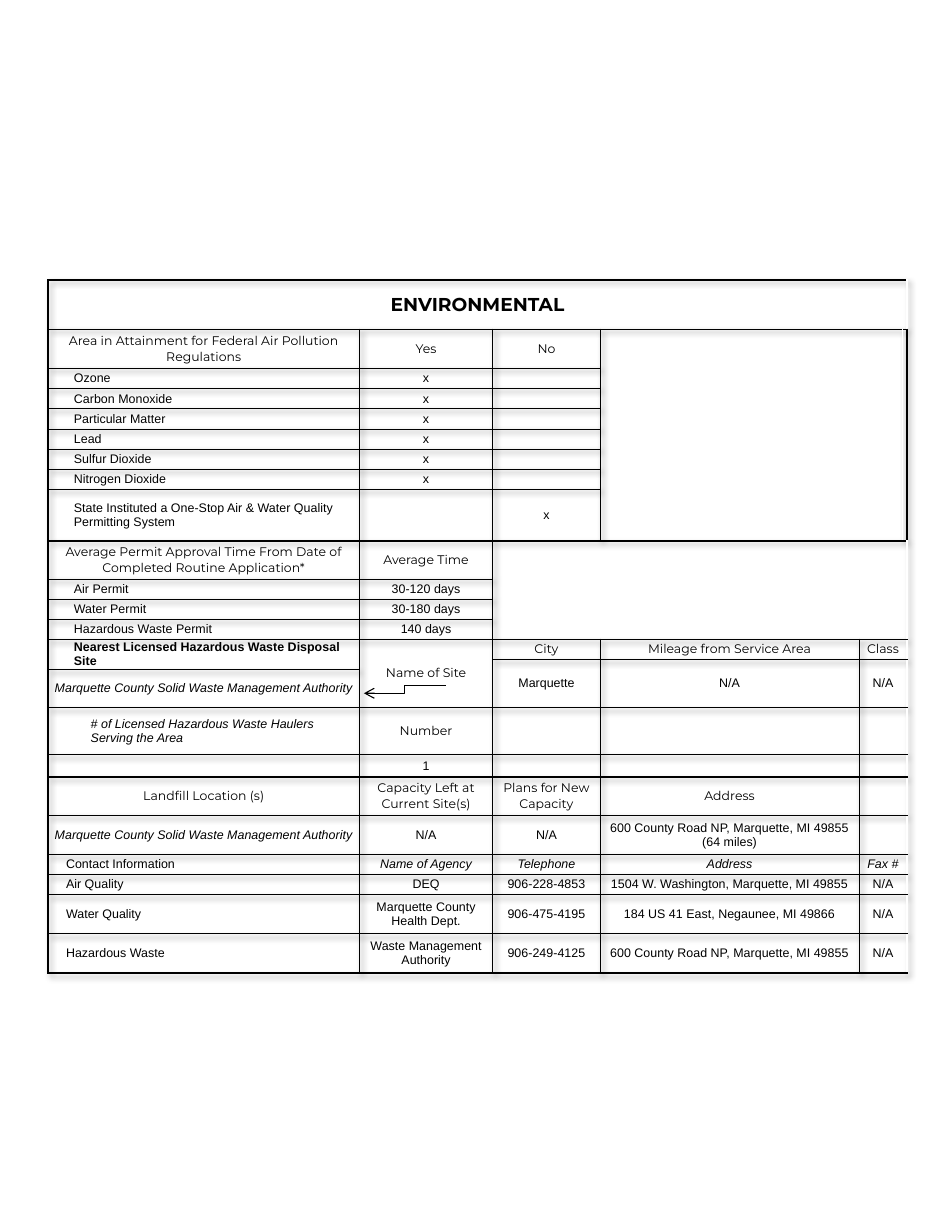
from dataclasses import dataclass

from lxml.etree import SubElement
from pptx import Presentation
from pptx.dml.color import RGBColor
from pptx.enum.shapes import MSO_CONNECTOR as Connector
from pptx.enum.text import MSO_ANCHOR as Anchor, PP_ALIGN as Align
from pptx.oxml import parse_xml
from pptx.oxml.ns import nsdecls, qn
from pptx.util import Inches, Pt


@dataclass(frozen=True)
class Theme:
    ink: str = "000000"
    heading_font: str = "Montserrat"
    body_font: str = "Arial"
    title_size: float = 12
    text_size: float = 8
    thin: float = 0.5
    thick: float = 1
    arrow: float = 0.75


@dataclass(frozen=True)
class Style:
    heading: bool = False
    size: float = Theme.text_size
    bold: bool = False
    italic: bool = False
    indent: float | None = None  # None means centred


TITLE = Style(heading=True, size=Theme.title_size, bold=True)
HEAD = Style(heading=True)
ITEM = Style(indent=0.23)
SITE = Style(indent=0.23, bold=True)
HAULERS = Style(indent=0.38, italic=True)
CONTACT = Style(indent=0.16)
VALUE = Style()
NOTE = Style(italic=True)

# One list per table row; a cell is (column, text, style, row span, column span).
AUTHORITY = "Marquette County Solid Waste Management Authority"


def contact(topic, agency, telephone, address, fax, style=VALUE):
    return [(0, topic, CONTACT), (1, agency, style), (2, telephone, style),
            (3, address, style), (4, fax, style, 1, 2)]


ROWS = [
    [(0, "ENVIRONMENTAL", TITLE, 1, 6)],
    [(0, "Area in Attainment for Federal Air Pollution Regulations", HEAD),
     (1, "Yes", HEAD), (2, "No", HEAD), (3, "", VALUE, 8, 2), (5, "", VALUE, 8, 1)],
    *[[(0, pollutant, ITEM), (1, "x", VALUE), (2, "", VALUE)] for pollutant in (
        "Ozone", "Carbon Monoxide", "Particular Matter", "Lead",
        "Sulfur Dioxide", "Nitrogen Dioxide")],
    [(0, "State Instituted a One-Stop Air & Water Quality Permitting System", ITEM),
     (1, "", VALUE), (2, "x", VALUE)],
    [(0, "Average Permit Approval Time From Date of Completed Routine Application*", HEAD),
     (1, "Average Time", HEAD), (2, "", VALUE, 4, 4)],
    *[[(0, permit, ITEM), (1, days, VALUE)] for permit, days in (
        ("Air Permit", "30-120 days"), ("Water Permit", "30-180 days"),
        ("Hazardous Waste Permit", "140 days"))],
    [(0, "Nearest Licensed Hazardous Waste Disposal Site", SITE, 2, 1),
     (1, "Name of Site", HEAD, 3, 1), (2, "City", HEAD),
     (3, "Mileage from Service Area", HEAD), (4, "Class", HEAD, 1, 2)],
    [(2, "Marquette", VALUE, 2, 1), (3, "N/A", VALUE, 2, 1), (4, "N/A", VALUE, 2, 2)],
    [(0, AUTHORITY, NOTE)],
    [(0, "# of Licensed Hazardous Waste Haulers Serving the Area", HAULERS),
     (1, "Number", HEAD), (2, "", VALUE), (3, "", VALUE), (4, "", VALUE, 1, 2)],
    [(0, "", VALUE), (1, "1", VALUE), (2, "", VALUE), (3, "", VALUE), (4, "", VALUE, 1, 2)],
    [(0, "Landfill Location (s)", HEAD), (1, "Capacity Left at Current Site(s)", HEAD),
     (2, "Plans for New Capacity", HEAD), (3, "Address", HEAD), (4, "", VALUE, 1, 2)],
    [(0, AUTHORITY, NOTE), (1, "N/A", VALUE), (2, "N/A", VALUE),
     (3, "600 County Road NP, Marquette, MI 49855 (64 miles)", VALUE), (4, "", VALUE, 1, 2)],
    contact("Contact Information", "Name of Agency", "Telephone", "Address", "Fax #", NOTE),
    contact("Air Quality", "DEQ", "906-228-4853",
            "1504 W. Washington, Marquette, MI 49855", "N/A"),
    contact("Water Quality", "Marquette County Health Dept.", "906-475-4195",
            "184 US 41 East, Negaunee, MI 49866", "N/A"),
    contact("Hazardous Waste", "Waste Management Authority", "906-249-4125",
            "600 County Road NP, Marquette, MI 49855", "N/A"),
]
COLUMN_WIDTHS = [2.78, 1.19, 0.96, 2.31, 0.39, 0.03]
ROW_HEIGHTS = [0.44, 0.35, *[0.18] * 6, 0.46, 0.34, *[0.18] * 4, 0.09, 0.34,
               0.42, 0.2, 0.34, 0.35, 0.18, 0.18, 0.35, 0.35]
TABLE_LEFT, TABLE_TOP = 0.43, 2.5

SECTION_LINES = {0, 1, 9, 13, 18, len(ROWS)}
SIDE_LINES = {0, len(COLUMN_WIDTHS)}
UNDRAWN_COLUMN_LINE = 5
BOXED = {(1, 3), (1, 5), (9, 2), (15, 0)}  # cells with a thick outline
ARROW_START, ARROW_END = (3.98, 6.12), (3.25, 6.19)


def outline(row, column, row_span, column_span):
    """Yield (row, column, side, edge) for each cell edge around a merged area."""
    bottom, right = row + row_span, column + column_span
    for r in range(row, bottom):
        yield r, column, "L", ("column", column, r)
        yield r, right - 1, "R", ("column", right, r)
    for c in range(column, right):
        yield row, c, "T", ("row", row, c)
        yield bottom - 1, c, "B", ("row", bottom, c)


def set_border(cell, side, width):
    properties = cell._tc.get_or_add_tcPr()
    line = SubElement(properties, qn(f"a:ln{side}"), w=str(Pt(width)))
    fill = SubElement(line, qn("a:solidFill"))
    SubElement(fill, qn("a:srgbClr"), val=Theme.ink)


def write(cell, text, style):
    paragraph = cell.text_frame.paragraphs[0]
    if text:
        paragraph.add_run().text = text
    paragraph.alignment = Align.CENTER if style.indent is None else Align.LEFT
    cell.margin_left = Inches(style.indent or 0)
    font = paragraph.font
    font.name = Theme.heading_font if style.heading else Theme.body_font
    font.size = Pt(style.size)
    font.bold, font.italic = style.bold, style.italic
    font.color.rgb = RGBColor.from_string(Theme.ink)


def add_environment_table(slide):
    frame = slide.shapes.add_table(
        len(ROWS), len(COLUMN_WIDTHS), Inches(TABLE_LEFT), Inches(TABLE_TOP),
        Inches(sum(COLUMN_WIDTHS)), Inches(sum(ROW_HEIGHTS)))
    table = frame.table
    table.first_row = table.horz_banding = False
    table._tbl.tblPr.insert(0, parse_xml(
        f'<a:effectLst {nsdecls("a")}><a:outerShdw blurRad="50800" dist="38100" '
        'dir="2700000" algn="tl" rotWithShape="0"><a:srgbClr val="000000">'
        '<a:alpha val="40000"/></a:srgbClr></a:outerShdw></a:effectLst>'))
    for column, width in zip(table.columns, COLUMN_WIDTHS):
        column.width = Inches(width)
    for row, height in zip(table.rows, ROW_HEIGHTS):
        row.height = Inches(height)
    for cell in table.iter_cells():
        cell.margin_left = cell.margin_right = cell.margin_top = cell.margin_bottom = 0
        cell.vertical_anchor = Anchor.MIDDLE
        end = SubElement(cell.text_frame.paragraphs[0]._p, qn("a:endParaRPr"))
        end.set("sz", str(int(Theme.text_size * 100)))

    areas = []
    for row, entries in enumerate(ROWS):
        for column, text, style, *spans in entries:
            row_span, column_span = spans or (1, 1)
            areas.append((row, column, row_span, column_span))
            cell = table.cell(row, column)
            write(cell, text, style)
            if spans:
                cell.merge(table.cell(row + row_span - 1, column + column_span - 1))

    thick_edges = {edge for area in areas if area[:2] in BOXED
                   for *_, edge in outline(*area)}
    borders = {}
    for area in areas:
        for row, column, side, edge in outline(*area):
            kind, line, _ = edge
            if (kind, line) == ("column", UNDRAWN_COLUMN_LINE):
                continue
            main_lines = SECTION_LINES if kind == "row" else SIDE_LINES
            thick = line in main_lines or edge in thick_edges
            borders[row, column, side] = Theme.thick if thick else Theme.thin
    for row in range(len(ROWS)):
        for column in range(len(COLUMN_WIDTHS)):
            cell = table.cell(row, column)
            for side in "LRTB":
                if (row, column, side) in borders:
                    set_border(cell, side, borders[row, column, side])
            cell.fill.background()


def add_site_arrow(slide):
    arrow = slide.shapes.add_connector(
        Connector.ELBOW, *map(Inches, ARROW_START + ARROW_END))
    arrow.line.color.rgb = RGBColor.from_string(Theme.ink)
    arrow.line.width = Pt(Theme.arrow)
    SubElement(arrow.line._get_or_add_ln(), qn("a:tailEnd"), type="arrow")
    SubElement(arrow._element.spPr, qn("a:effectLst"))


def main():
    presentation = Presentation()
    presentation.slide_width, presentation.slide_height = Inches(8.5), Inches(11)
    slide = presentation.slides.add_slide(presentation.slide_layouts[6])
    add_environment_table(slide)
    add_site_arrow(slide)
    presentation.save("out.pptx")


if __name__ == "__main__":
    main()
